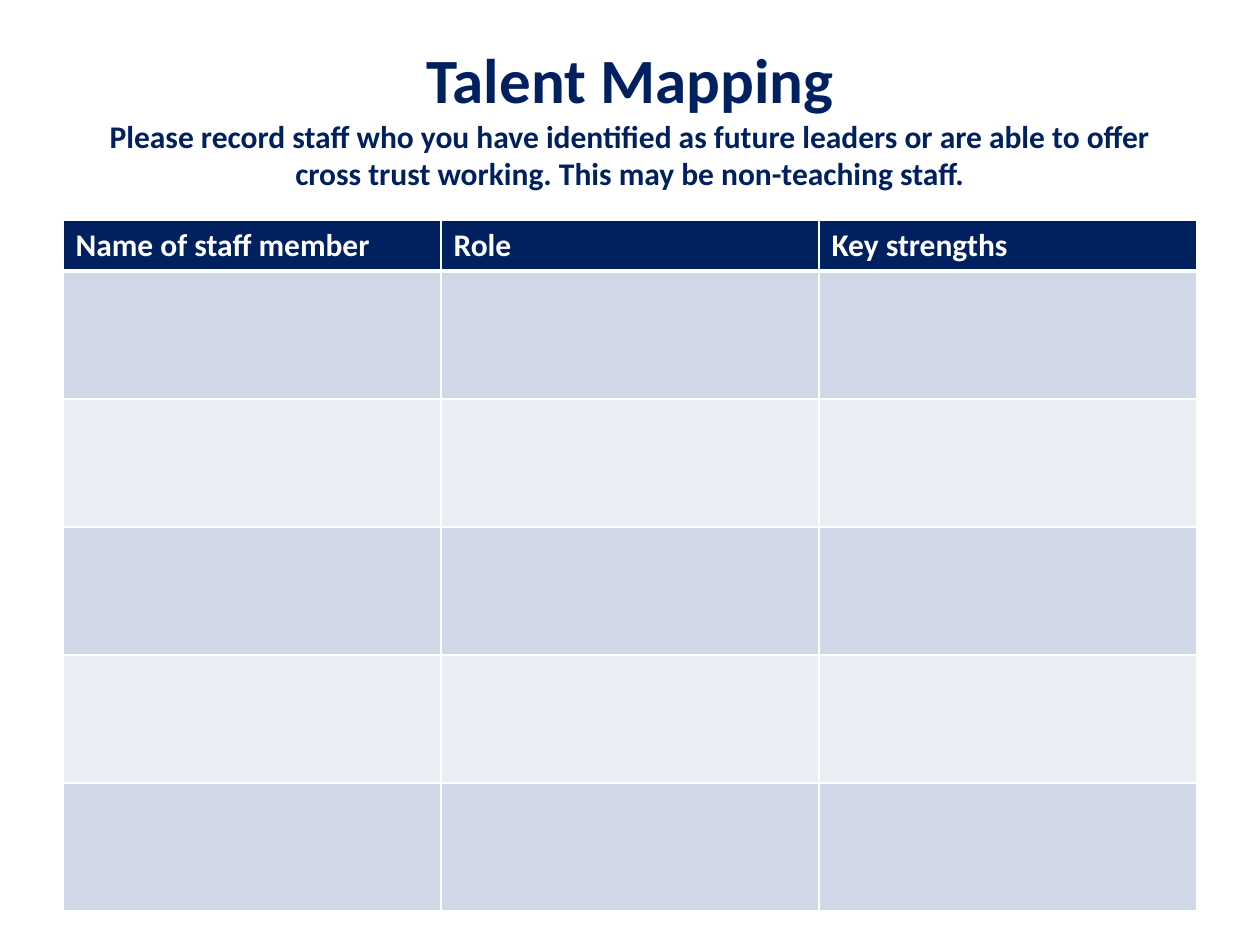
from dataclasses import dataclass

from lxml import etree
from pptx import Presentation
from pptx.dml.color import RGBColor
from pptx.enum.text import MSO_ANCHOR, PP_ALIGN
from pptx.oxml.ns import qn
from pptx.util import Inches, Pt

CENTER = PP_ALIGN.CENTER
MIDDLE = MSO_ANCHOR.MIDDLE
FONT = "Calibri"
COLORS = {
    "navy": "002060",
    "white": "FFFFFF",
    "dark_band": "D0D8E8",
    "light_band": "E9EDF4",
}
SLIDE_WIDTH = Inches(10)
SLIDE_HEIGHT = Inches(7.5)
HEADINGS = ["Name of staff member", "Role", "Key strengths"]
BODY_ROWS = 5
HEADER_HEIGHT = Inches(0.4)
BODY_HEIGHT = Inches(5.08)


@dataclass(frozen=True)
class Area:
    left: float
    top: float
    width: float
    height: float

    def lengths(self) -> tuple[int, int, int, int]:
        return (
            int(self.left * SLIDE_WIDTH),
            int(self.top * SLIDE_HEIGHT),
            int(self.width * SLIDE_WIDTH),
            int(self.height * SLIDE_HEIGHT),
        )


@dataclass(frozen=True)
class RowStyle:
    fill: str
    bottom_line: float


TITLE_AREA = Area(0.05, 0.04, 0.9, 1 / 6)
TABLE_AREA = Area(0.05, 7 / 30, 0.9, 0.73)
HEADER_STYLE = RowStyle("navy", 3)
BAND_STYLES = [RowStyle("dark_band", 1), RowStyle("light_band", 1)]


def write_text(paragraph, text: str, *, size: float, color: str, bold: bool = True) -> None:
    run = paragraph.add_run()
    run.text = text
    run.font.name = FONT
    run.font.size = Pt(size)
    run.font.bold = bold
    run.font.color.rgb = RGBColor.from_string(COLORS[color])


def style_cell(cell, style: RowStyle, top_line: float) -> None:
    cell_properties = cell._tc.get_or_add_tcPr()
    widths = {"lnL": 1, "lnR": 1, "lnT": top_line, "lnB": style.bottom_line}
    for side, width in widths.items():
        line = etree.SubElement(cell_properties, qn(f"a:{side}"), w=str(Pt(width)))
        fill = etree.SubElement(line, qn("a:solidFill"))
        etree.SubElement(fill, qn("a:srgbClr"), val=COLORS["white"])
    cell.fill.solid()
    cell.fill.fore_color.rgb = RGBColor.from_string(COLORS[style.fill])


def add_title(slide) -> None:
    frame = slide.shapes.add_textbox(*TITLE_AREA.lengths()).text_frame
    frame.word_wrap = True
    frame.vertical_anchor = MIDDLE
    paragraph = frame.paragraphs[0]
    paragraph.alignment = CENTER
    write_text(paragraph, "Talent Mapping", size=36, color="navy")
    paragraph.add_line_break()
    write_text(
        paragraph,
        "Please record staff who you have identified as future leaders or are able "
        "to offer cross trust working. This may be non-teaching staff.",
        size=18,
        color="navy",
    )


def add_staff_table(slide) -> None:
    table = slide.shapes.add_table(
        BODY_ROWS + 1, len(HEADINGS), *TABLE_AREA.lengths()
    ).table
    styles = [HEADER_STYLE] + [BAND_STYLES[index % 2] for index in range(BODY_ROWS)]
    top_line = 1
    for index, (row, style) in enumerate(zip(table.rows, styles)):
        row.height = HEADER_HEIGHT if index == 0 else BODY_HEIGHT // BODY_ROWS
        for cell in row.cells:
            style_cell(cell, style, top_line)
        top_line = style.bottom_line
    for cell, heading in zip(table.rows[0].cells, HEADINGS):
        write_text(cell.text_frame.paragraphs[0], heading, size=18, color="white")


def main() -> None:
    presentation = Presentation()
    presentation.slide_width = SLIDE_WIDTH
    presentation.slide_height = SLIDE_HEIGHT
    slide = presentation.slides.add_slide(presentation.slide_layouts[6])
    add_title(slide)
    add_staff_table(slide)
    presentation.save("out.pptx")


if __name__ == "__main__":
    main()
